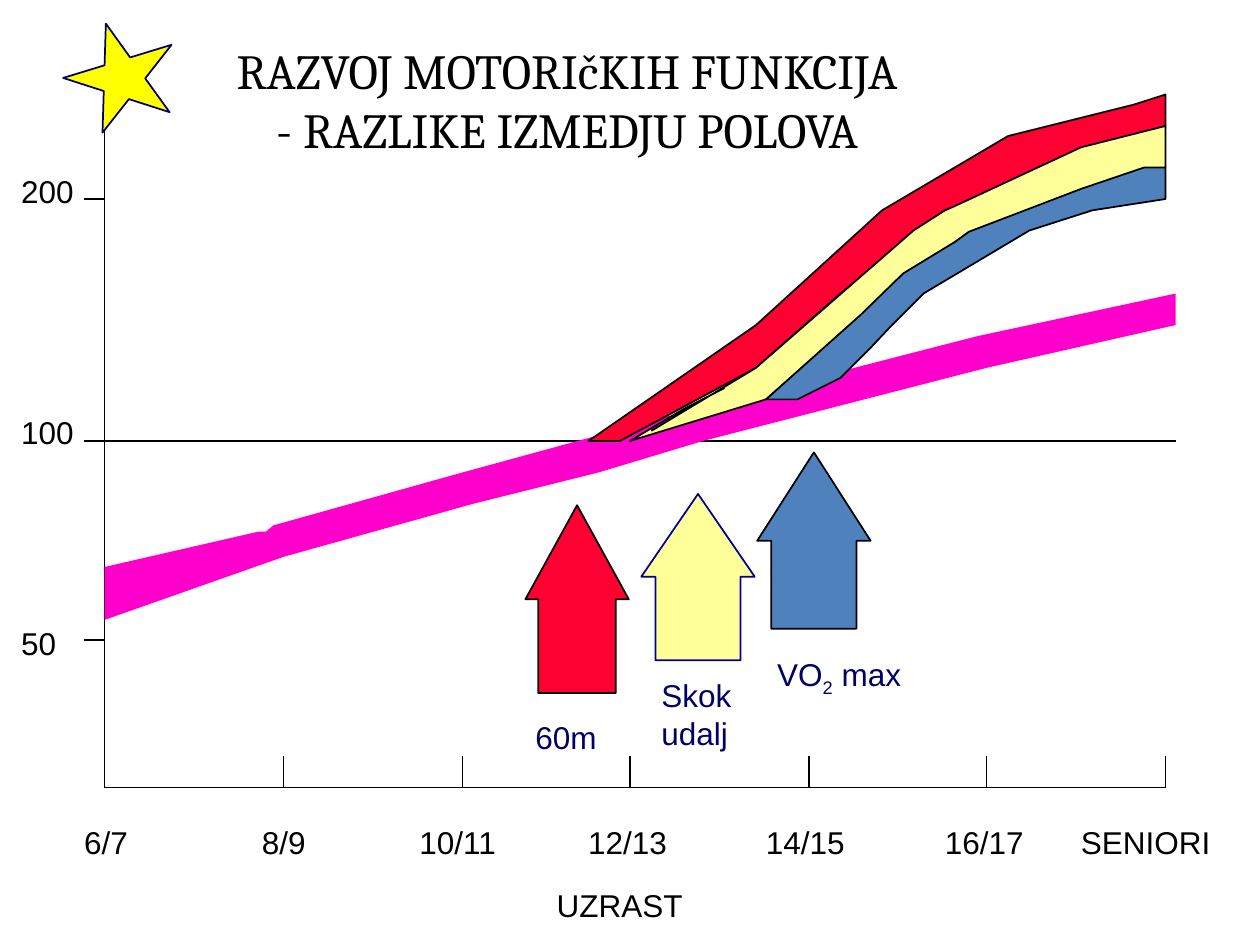
import pptx
import pptx.dml.color
import pptx.enum.shapes
import pptx.enum.text
import pptx.oxml.ns
import pptx.util
from dataclasses import dataclass
from typing import Any, Optional

Inches = pptx.util.Inches
Pt = pptx.util.Pt
Form = pptx.enum.shapes.MSO_SHAPE
Point = tuple[float, float]

HUES = {
    "black": "000000", "navy": "000066", "blue": "000099", "star": "FFFF00",
    "girls": "FF00CC", "sprint": "FF0033", "jump": "FFFF99", "oxygen": "4F81BD",
}
FRAME = {
    "margin_left": Inches(0.1), "margin_right": Inches(0.1),
    "margin_top": Inches(0.05), "margin_bottom": Inches(0.05),
    "vertical_anchor": pptx.enum.text.MSO_ANCHOR.TOP,
}
LABEL = {"name": "Arial", "size": Pt(18)}
HEAD = {"name": "Cambria", "size": Pt(28)}


@dataclass
class Label:
    text: str
    left: float
    top: float
    width: float
    height: float = 0.5
    hue: str = "black"


@dataclass
class Arrow:
    hue: str
    edge: str
    left: float
    top: float
    width: float
    height: float
    tip: float


@dataclass
class Band:
    hue: str
    edge: Optional[str]
    points: list[Point]


def apply(target: Any, values: dict[str, Any]) -> None:
    for key, value in values.items():
        setattr(target, key, value)


def tint(hue: str) -> pptx.dml.color.RGBColor:
    return pptx.dml.color.RGBColor.from_string(HUES[hue])


def paint(shape: Any, hue: str, edge: Optional[str]) -> None:
    shape.shadow.inherit = False
    shape.fill.solid()
    shape.fill.fore_color.rgb = tint(hue)
    if edge:
        shape.line.color.rgb = tint(edge)
        shape.line.width = Pt(1)
    else:
        shape.line.fill.background()


def style(para: Any, font: dict[str, Any], hue: str) -> None:
    for run in para.runs:
        apply(run.font, font)
        run.font.color.rgb = tint(hue)


def draw_label(slide: Any, item: Label) -> Any:
    box = slide.shapes.add_textbox(
        *map(Inches, (item.left, item.top, item.width, item.height)))
    frame = box.text_frame
    apply(frame, FRAME | {"word_wrap": False, "text": item.text})
    frame.auto_size = pptx.enum.text.MSO_AUTO_SIZE.SHAPE_TO_FIT_TEXT
    for para in frame.paragraphs:
        style(para, LABEL, item.hue)
    return frame


def draw_line(slide: Any, start: Point, end: Point) -> None:
    line = slide.shapes.add_connector(
        pptx.enum.shapes.MSO_CONNECTOR.STRAIGHT, *map(Inches, start + end))
    line.line.color.rgb = tint("black")
    line.line.width = Pt(1)
    props = line._element.spPr
    props.append(props.makeelement(pptx.oxml.ns.qn("a:effectLst"), {}))


def draw_band(slide: Any, band: Band) -> None:
    spots = [(Inches(x), Inches(y)) for x, y in band.points]
    pen = slide.shapes.build_freeform(*spots[0])
    pen.add_line_segments(spots[1:], close=False)
    paint(pen.convert_to_shape(), band.hue, band.edge)


def draw_arrow(slide: Any, item: Arrow) -> None:
    shape = slide.shapes.add_shape(Form.UP_ARROW, *map(
        Inches, (item.left, item.top, item.width, item.height)))
    shape.adjustments[0] = 0.75
    shape.adjustments[1] = item.tip
    paint(shape, item.hue, item.edge)


LEFT, RIGHT, BASE = 0.83, 9.25, 6.25

# Age groups: tick place and label
AGES = [
    (LEFT, Label("6/7", 0.57, 6.48, 0.63)),
    (2.25, Label("8/9", 1.98, 6.48, 0.63)),
    (3.67, Label("10/11", 3.23, 6.48, 0.96)),
    (5, Label("12/13", 4.57, 6.48, 0.96)),
    (6.42, Label("14/15", 5.98, 6.48, 0.96)),
    (7.83, Label("16/17", 7.4, 6.48, 0.96)),
    (RIGHT, Label("SENIORI", 8.48, 6.48, 1.52)),
]

# Scale: tick height, tick end and label
SCALE = [
    (5.08, LEFT, Label("50", 0.07, 4.9, 0.53)),
    (3.5, 9.33, Label("100", 0.07, 3.23, 0.7)),
    (1.58, LEFT, Label("200", 0.07, 1.32, 0.7)),
]

BANDS = [
    Band("girls", None, [
        (0.83, 4.92), (2.25, 4.42), (3.75, 4), (4.75, 3.75), (5.58, 3.5),
        (7.83, 2.92), (9.33, 2.58), (9.33, 2.33), (7.75, 2.67), (5.5, 3.25),
        (3.67, 3.75), (2.17, 4.17), (2.11, 4.22), (2.05, 4.22), (0.83, 4.5),
        (0.83, 4.92)]),
    Band("sprint", "black", [
        (4.67, 3.5), (6, 2.58), (7, 1.67), (8, 1.08), (9, 0.83), (9.25, 0.75),
        (9.25, 1), (8.67, 1.17), (7.75, 1.58), (7.5, 1.67), (6.67, 2.33),
        (6, 2.92), (4.92, 3.5), (4.67, 3.5)]),
    Band("jump", "black", [
        (5.17, 3.42), (6, 2.92), (7.25, 1.83), (7.5, 1.67), (7.57, 1.64),
        (8.58, 1.17), (9.25, 1), (9.25, 1.33), (8.83, 1.42), (8.17, 1.67),
        (7.75, 1.83), (7.25, 2.17), (6.75, 2.58), (6.08, 3.17), (5, 3.5),
        (5.42, 3.25), (5.75, 3.08)]),
    Band("oxygen", "black", [
        (6.08, 3.17), (6.83, 2.5), (7.17, 2.17), (7.58, 1.92), (7.69, 1.84),
        (8.58, 1.5), (9.08, 1.33), (9.25, 1.33), (9.25, 1.58), (8.67, 1.67),
        (8.17, 1.83), (7.75, 2.08), (7.33, 2.33), (7.08, 2.58), (6.92, 2.75),
        (6.67, 3), (6.33, 3.17), (6.08, 3.17)]),
]

ARROWS = [
    Arrow("sprint", "black", 4.17, 4.01, 0.82, 1.49, 0.91),
    Arrow("jump", "blue", 5.09, 3.92, 0.9, 1.32, 0.73),
    Arrow("oxygen", "black", 6.01, 3.59, 0.9, 1.4, 0.78),
]


def main() -> None:
    deck = pptx.Presentation()
    apply(deck, {"slide_width": Inches(10), "slide_height": Inches(7.5)})
    slide = deck.slides.add_slide(deck.slide_layouts[5])

    # Axes
    draw_line(slide, (LEFT, BASE), (RIGHT, BASE))
    draw_line(slide, (LEFT, 0.5), (LEFT, BASE))
    for x, label in AGES:
        if x > LEFT:
            draw_line(slide, (x, BASE - 0.25), (x, BASE))
        draw_label(slide, label)
    for y, end, label in SCALE:
        draw_line(slide, (0.67, y), (end, y))
        draw_label(slide, label)
    draw_label(slide, Label("UZRAST", 4.32, 6.98, 1.5))

    # Star and title
    star = slide.shapes.add_shape(
        Form.STAR_5_POINT, *map(Inches, (0.51, 0.17, 0.9, 0.82)))
    star.rotation = 343
    paint(star, "star", "navy")
    title = slide.shapes.title
    apply(title, {"left": Inches(1.65), "top": Inches(0.27),
                  "width": Inches(5.7), "height": Inches(1.04)})
    frame = title.text_frame
    apply(frame, FRAME | {
        "word_wrap": True, "auto_size": pptx.enum.text.MSO_AUTO_SIZE.NONE,
        "text": "RAZVOJ MOTORIčKIH FUNKCIJA\n- RAZLIKE IZMEDJU POLOVA"})
    for para in frame.paragraphs:
        para.alignment = pptx.enum.text.PP_ALIGN.CENTER
        style(para, HEAD, "black")

    # Growth bands and their arrows
    for band in BANDS:
        draw_band(slide, band)
    for arrow in ARROWS:
        draw_arrow(slide, arrow)
    draw_label(slide, Label("60m", 4.15, 5.65, 0.79, hue="navy"))
    draw_label(slide, Label("Skok\nudalj", 5.15, 5.32, 0.89, 0.9, "navy"))
    oxygen = draw_label(slide, Label("VO", 6.07, 5.15, 1.45, hue="navy"))
    para = oxygen.paragraphs[0]
    for text, shift in (("2", "-25000"), (" max", "0")):
        run = para.add_run()
        run.text = text
        run._r.get_or_add_rPr().set("baseline", shift)
    style(para, LABEL, "navy")

    deck.save("out.pptx")


if __name__ == "__main__":
    main()
